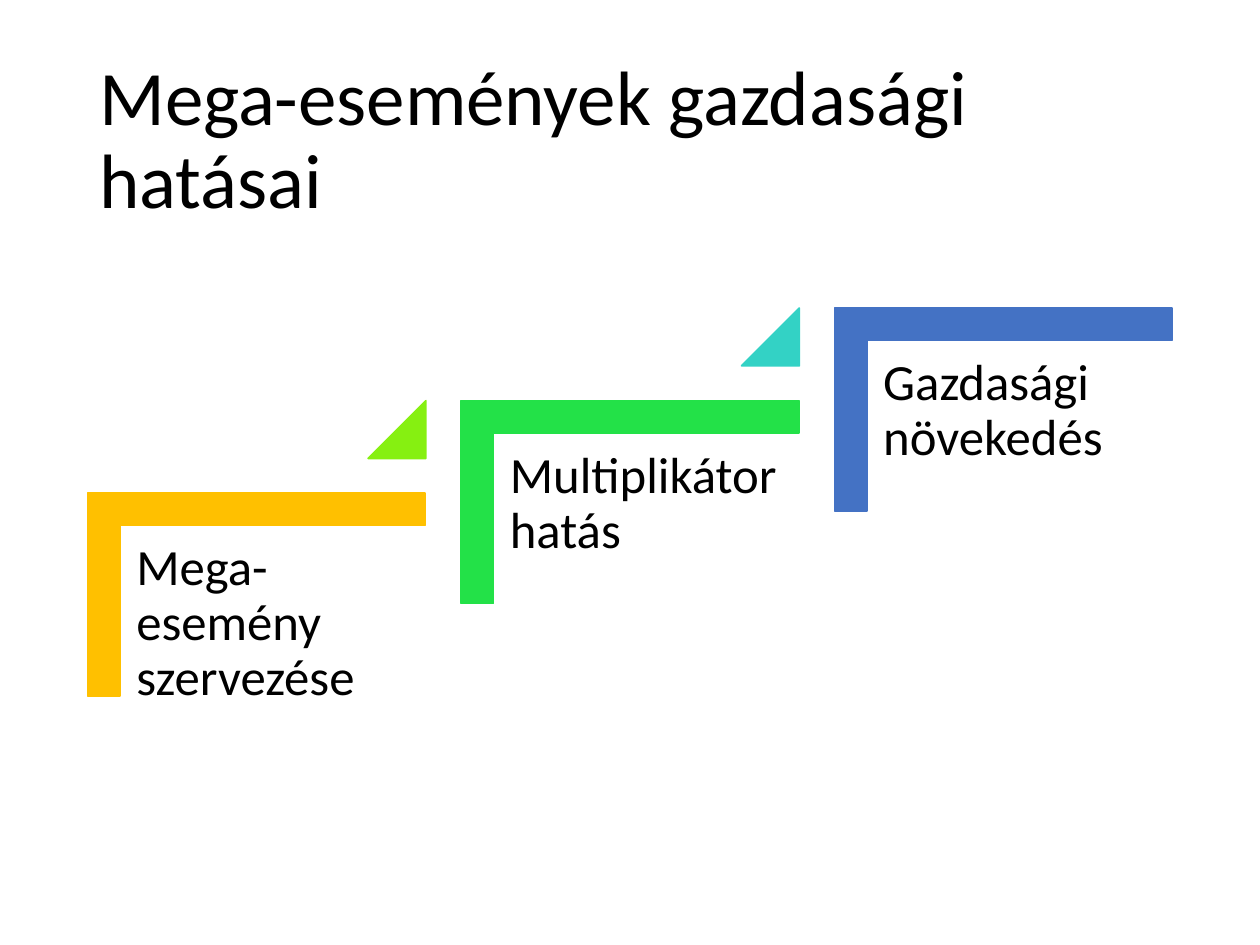
"""Build a slide with three rising steps on the economic effects of mega-events."""
from pptx import Presentation
from pptx.dml.color import RGBColor
from pptx.enum.shapes import MSO_SHAPE
from pptx.enum.text import MSO_ANCHOR, MSO_AUTO_SIZE, PP_ALIGN
from pptx.util import Pt

CORNER, TRIANGLE = MSO_SHAPE.CORNER, MSO_SHAPE.ISOSCELES_TRIANGLE
TOP, MIDDLE = MSO_ANCHOR.TOP, MSO_ANCHOR.MIDDLE
NO_FIT, LEFT = MSO_AUTO_SIZE.NONE, PP_ALIGN.LEFT


def paint(shape, color):
    shape.shadow.inherit = False
    shape.fill.solid()
    shape.fill.fore_color.rgb = RGBColor.from_string(color)
    shape.line.color.rgb = RGBColor.from_string(color)
    shape.line.width = Pt(1)


def write(box, wording, size, frame_format):
    frame = box.text_frame
    frame.text = wording
    for attribute, value in frame_format.items():
        setattr(frame, attribute, value)
    paragraph = frame.paragraphs[0]
    paragraph.alignment = LEFT
    paragraph.line_spacing = 0.9
    font = paragraph.runs[0].font
    font.name = "Calibri"
    font.size = Pt(size)
    font.color.rgb = RGBColor.from_string("000000")


prs = Presentation()
prs.slide_width, prs.slide_height = Pt(720), Pt(540)
slide = prs.slides.add_slide(prs.slide_layouts[5])
shapes = slide.shapes

title = shapes.title
title.left, title.top, title.width, title.height = Pt(49.5), Pt(28.75), Pt(621), Pt(104.4)
base_format = {"word_wrap": True, "auto_size": NO_FIT}
write(title, "Mega-események gazdasági hatásai", 44,
      {**base_format, "vertical_anchor": MIDDLE})

margins = ("margin_left", "margin_top", "margin_right", "margin_bottom")
label_format = {**base_format, "vertical_anchor": TOP, **dict.fromkeys(margins, Pt(8.7))}

steps = [
    ("Mega-esemény szervezése", "FFC000", "86F011"),
    ("Multiplikátor hatás", "23E148", "33D2C5"),
    ("Gazdasági növekedés", "4472C4", None),
]
step_run, step_rise = 213.4, 52.9

for index, (wording, corner_color, triangle_color) in enumerate(steps):
    x, y = index * step_run, -index * step_rise

    corner = shapes.add_shape(CORNER, Pt(88.5 + x), Pt(243.3 + y), Pt(116), Pt(193))
    corner.rotation = 90
    corner.adjustments[0] = corner.adjustments[1] = 0.16
    paint(corner, corner_color)

    label = shapes.add_textbox(Pt(69.2 + x), Pt(301 + y), Pt(174.2), Pt(152.7))
    write(label, wording, 29, label_format)

    if triangle_color:
        triangle = shapes.add_shape(TRIANGLE, Pt(210.4 + x), Pt(229 + y), Pt(33), Pt(33))
        triangle.adjustments[0] = 1
        paint(triangle, triangle_color)

prs.save("out.pptx")
